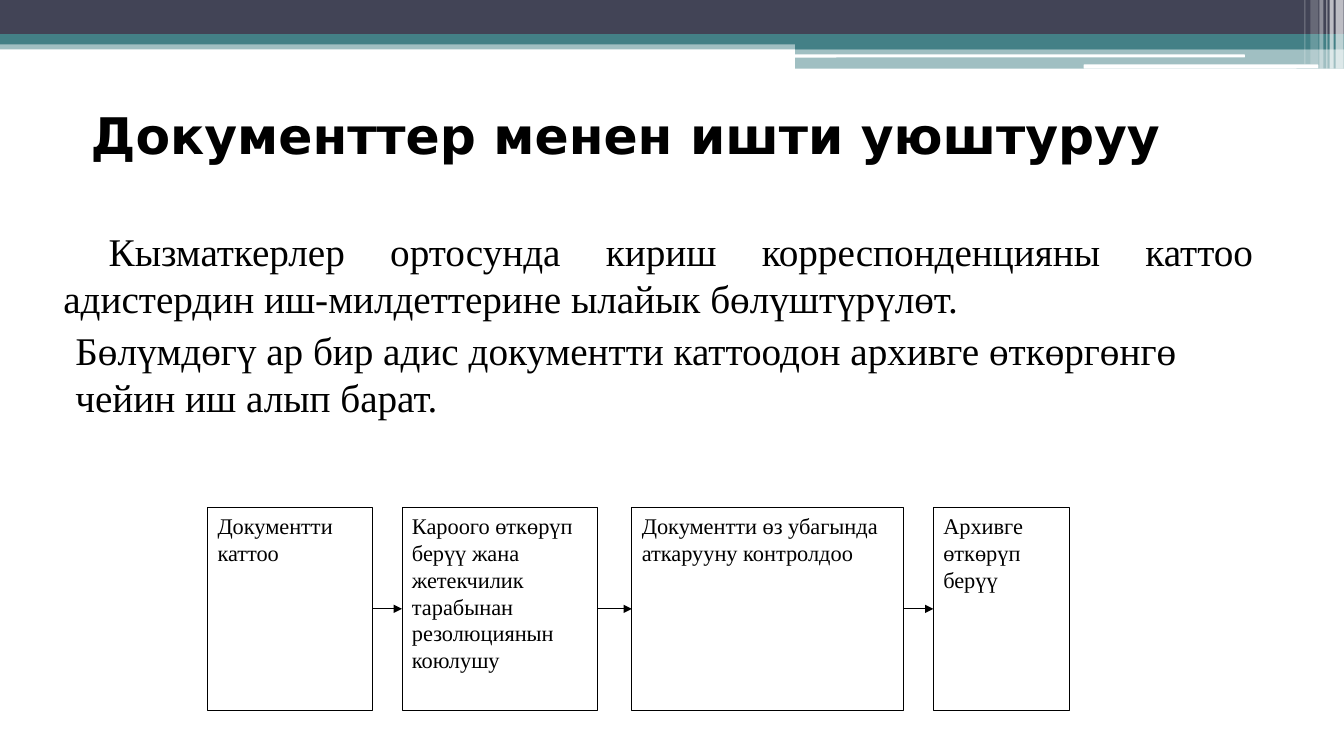
from dataclasses import dataclass
from lxml.etree import SubElement
from pptx import Presentation
from pptx.dml.color import RGBColor
from pptx.enum.shapes import MSO_CONNECTOR, MSO_SHAPE
from pptx.enum.text import MSO_ANCHOR, MSO_AUTO_SIZE, PP_ALIGN
from pptx.oxml.ns import qn
from pptx.util import Pt


@dataclass(frozen=True)
class Theme:
    navy: str = "424456"
    teal: str = "438086"
    white: str = "FFFFFF"
    black: str = "000000"
    heading_font: str = "DejaVu Sans"
    text_font: str = "Times New Roman"
    title_size: float = 36
    body_size: float = 28
    step_size: float = 16
    line_width: float = 0.75


THEME = Theme()
WIDTH, HEIGHT = 960, 540

TITLE = "Документтер менен ишти уюштуруу"
BODY = [
    (" Кызматкерлер ортосунда кириш корреспонденцияны каттоо адистердин "
     "иш-милдеттерине ылайык бөлүштүрүлөт.", PP_ALIGN.JUSTIFY, 0),
    ("Бөлүмдөгү ар бир адис документти каттоодон архивге өткөргөнгө "
     "чейин иш алып барат.", PP_ALIGN.LEFT, 8.64),
]
STEPS = [
    ("Документти каттоо", 148.3, 118.1),
    ("Кароого өткөрүп берүү жана жетекчилик тарабынан резолюциянын коюлушу", 287.2, 139.8),
    ("Документти өз убагында аткарууну контролдоо", 451.4, 193.7),
    ("Архивге өткөрүп берүү", 666.7, 97.2),
]
STEP_TOP, STEP_HEIGHT = 362.2, 145.4

BANDS = [
    (0, 28.8, WIDTH, 6.5, THEME.teal, 50),
    (0, 0, WIDTH, 24.5, THEME.navy, 100),
    (0, 24.5, WIDTH, 7.2, THEME.teal, 100),
    (568, 28.1, 392, 7.2, THEME.teal, 100),
    (568, 34.8, 392, 14.2, THEME.teal, 50),
]
SLOTS = [(567.4, 38.9, 321.8, 2.2), (774, 46.1, 167.8, 2.9)]
STRIPES = [
    (954, 5.8, 49, 65),
    (949.7, 2.9, 49, 65),
    (947.5, 0.7, 49, 60),
    (942.5, 2.9, 49, 40),
    (936, 5.8, 46.1, 20),
    (931.7, 0.7, 46.1, 30),
]


def color(value):
    return RGBColor.from_string(value)


def add_block(page, left, top, width, height, fill, alpha=100,
              kind=MSO_SHAPE.RECTANGLE, outline=None):
    block = page.shapes.add_shape(kind, Pt(left), Pt(top), Pt(width), Pt(height))
    block.shadow.inherit = False
    block.fill.solid()
    block.fill.fore_color.rgb = color(fill)
    if alpha < 100:
        tint = block.fill._xPr.find(".//" + qn("a:srgbClr"))
        SubElement(tint, qn("a:alpha"), val=str(alpha * 1000))
    if outline:
        block.line.color.rgb = color(outline)
        block.line.width = Pt(THEME.line_width)
    else:
        block.line.fill.background()
    return block


def write(para, text, size, font=THEME.text_font, bold=False,
          align=PP_ALIGN.LEFT, before=0, indent=0):
    para.alignment = align
    para.space_before = Pt(before)
    properties = para._p.get_or_add_pPr()
    properties.set("marL", str(Pt(indent)))
    properties.set("indent", "0")
    span = para.add_run()
    span.text = text
    span.font.size = Pt(size)
    span.font.name = font
    span.font.bold = bold
    span.font.color.rgb = color(THEME.black)


def prepare_frame(frame, anchor=MSO_ANCHOR.TOP):
    frame.word_wrap = True
    frame.auto_size = MSO_AUTO_SIZE.NONE
    frame.vertical_anchor = anchor


def add_arrow(page, start, end):
    middle = STEP_TOP + STEP_HEIGHT / 2
    arrow = page.shapes.add_connector(
        MSO_CONNECTOR.STRAIGHT, start.left + start.width, Pt(middle), end.left, Pt(middle))
    arrow.begin_connect(start, 3)
    arrow.end_connect(end, 1)
    arrow.line.color.rgb = color(THEME.black)
    arrow.line.width = Pt(THEME.line_width)
    SubElement(arrow.line._get_or_add_ln(), qn("a:tailEnd"), type="triangle")
    SubElement(arrow._element.spPr, qn("a:effectLst"))


def add_header(page):
    for band in BANDS:
        add_block(page, *band)
    for slot in SLOTS:
        add_block(page, *slot, THEME.white, kind=MSO_SHAPE.ROUNDED_RECTANGLE)
    for left, width, height, alpha in STRIPES:
        add_block(page, left, 0, width, height, THEME.white, alpha)


def add_text(page):
    title = page.shapes.title
    title.left, title.top, title.width, title.height = Pt(57.6), Pt(54), Pt(864), Pt(84.2)
    prepare_frame(title.text_frame, MSO_ANCHOR.MIDDLE)
    write(title.text_frame.paragraphs[0], TITLE, THEME.title_size,
          font=THEME.heading_font, bold=True)

    box = page.shapes.add_textbox(Pt(38.2), Pt(159.1), Pt(864), Pt(169.9))
    prepare_frame(box.text_frame)
    for index, (text, align, indent) in enumerate(BODY):
        para = box.text_frame.add_paragraph() if index else box.text_frame.paragraphs[0]
        write(para, text, THEME.body_size, align=align, before=3, indent=indent)


def add_flow(page):
    boxes = []
    for text, left, width in STEPS:
        box = add_block(page, left, STEP_TOP, width, STEP_HEIGHT, THEME.white,
                        outline=THEME.black)
        prepare_frame(box.text_frame)
        write(box.text_frame.paragraphs[0], text, THEME.step_size)
        boxes.append(box)
    for start, end in zip(boxes, boxes[1:]):
        add_arrow(page, start, end)


def main():
    deck = Presentation()
    deck.slide_width, deck.slide_height = Pt(WIDTH), Pt(HEIGHT)
    page = deck.slides.add_slide(deck.slide_layouts[5])
    add_header(page)
    add_text(page)
    add_flow(page)
    deck.save("out.pptx")


if __name__ == "__main__":
    main()
